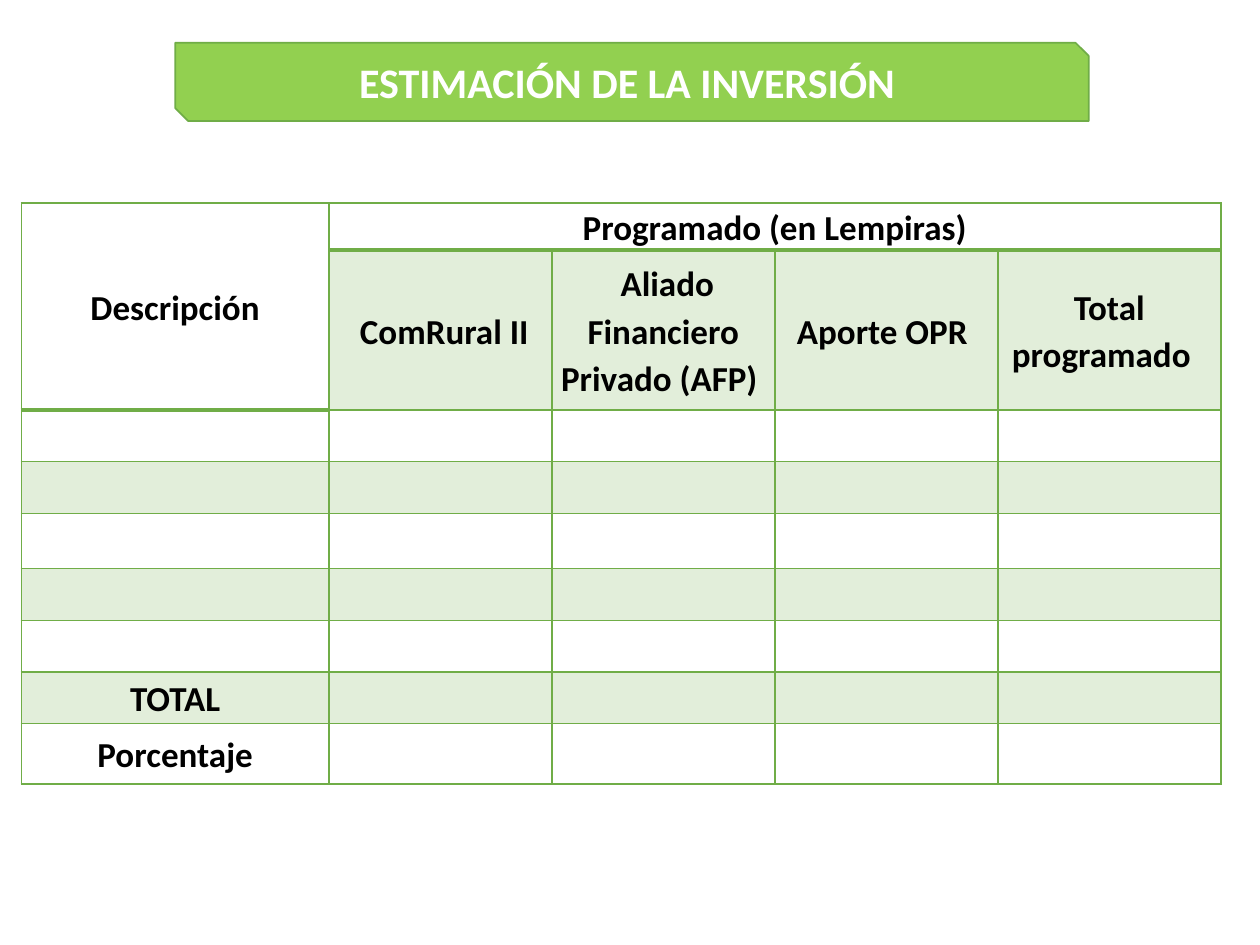
from lxml import etree
from pptx import Presentation
from pptx.dml.color import RGBColor
from pptx.enum.shapes import MSO_SHAPE
from pptx.enum.text import MSO_ANCHOR, PP_ALIGN
from pptx.oxml.ns import qn
from pptx.util import Inches, Pt

SNIP = MSO_SHAPE.SNIP_2_DIAG_RECTANGLE
MIDDLE = MSO_ANCHOR.MIDDLE
CENTER = PP_ALIGN.CENTER
FONT = "Calibri"
COLORS = {"banner": "92D050", "green": "70AD47", "white": "FFFFFF", "black": "000000"}


def rgb(name):
    return RGBColor.from_string(COLORS[name])


def add_border(tc_pr, side, points):
    ln = etree.SubElement(tc_pr, qn(f"a:ln{side}"), w=str(Pt(points)))
    fill = etree.SubElement(ln, qn("a:solidFill"))
    etree.SubElement(fill, qn("a:srgbClr"), val=COLORS["green"])


prs = Presentation()
prs.slide_width, prs.slide_height = Inches(10), Inches(7.5)
s = prs.slides.add_slide(prs.slide_layouts[6])

# Title banner
sp = s.shapes.add_shape(SNIP, Inches(1.39), Inches(0.34), Inches(7.25), Inches(0.62))
sp.shadow.inherit = False
sp.fill.solid()
sp.fill.fore_color.rgb = rgb("banner")
sp.line.color.rgb = rgb("green")
sp.line.width = Pt(1)
tf = sp.text_frame
tf.vertical_anchor = MIDDLE
p = tf.paragraphs[0]
p.text = "ESTIMACIÓN DE LA INVERSIÓN "
p.alignment = CENTER
p.font.name, p.font.size, p.font.bold = FONT, Pt(24), True
p.font.color.rgb = rgb("white")

# Table grid
widths = [2.44] + [1.77] * 4
heights = [0.36, 1.27, 0.41, 0.41, 0.44, 0.41, 0.41, 0.41, 0.48]
table = s.shapes.add_table(len(heights), len(widths), Inches(0.17), Inches(1.61),
                           Inches(sum(widths)), Inches(sum(heights))).table
table.first_row = table.horz_banding = False
for col, width in zip(table.columns, widths):
    col.width = Inches(width)
for row, height in zip(table.rows, heights):
    row.height = Inches(height)
table.cell(0, 0).merge(table.cell(1, 0))
table.cell(0, 1).merge(table.cell(0, 4))

labels = {
    (0, 0): "Descripción",
    (0, 1): "Programado (en Lempiras)",
    (1, 1): " ComRural II",
    (1, 2): " Aliado Financiero Privado (AFP) ",
    (1, 3): "Aporte OPR ",
    (1, 4): "Total programado  ",
    (7, 0): " TOTAL ",
    (8, 0): "Porcentaje",
}

# Cells: text, borders and shading of every second row
for r in range(len(heights)):
    for c in range(len(widths)):
        cell = table.cell(r, c)
        cell.margin_left = cell.margin_right = Inches(0.04)
        cell.margin_top = cell.margin_bottom = 0
        cell.vertical_anchor = MIDDLE
        p = cell.text_frame.paragraphs[0]
        p.text = labels.get((r, c), "")
        p.alignment, p.line_spacing, p.space_after = CENTER, 1.1, Pt(9)
        p.font.name, p.font.size, p.font.bold = FONT, Pt(20), True
        p.font.color.rgb = rgb("black")

        # A heavy rule closes the header: one row lower in the merged first column
        header_end = 1 if c == 0 else 0
        tc_pr = cell._tc.get_or_add_tcPr()
        add_border(tc_pr, "L", 1)
        add_border(tc_pr, "R", 1)
        add_border(tc_pr, "T", 2 if r == header_end + 1 else 1)
        add_border(tc_pr, "B", 2 if r <= header_end else 1)

        if r % 2 and (r, c) != (1, 0):
            cell.fill.solid()
            cell.fill.fore_color.rgb = rgb("green")
            color = tc_pr.find(qn("a:solidFill")).find(qn("a:srgbClr"))
            etree.SubElement(color, qn("a:alpha"), val="20000")
        else:
            cell.fill.background()

prs.save("out.pptx")
